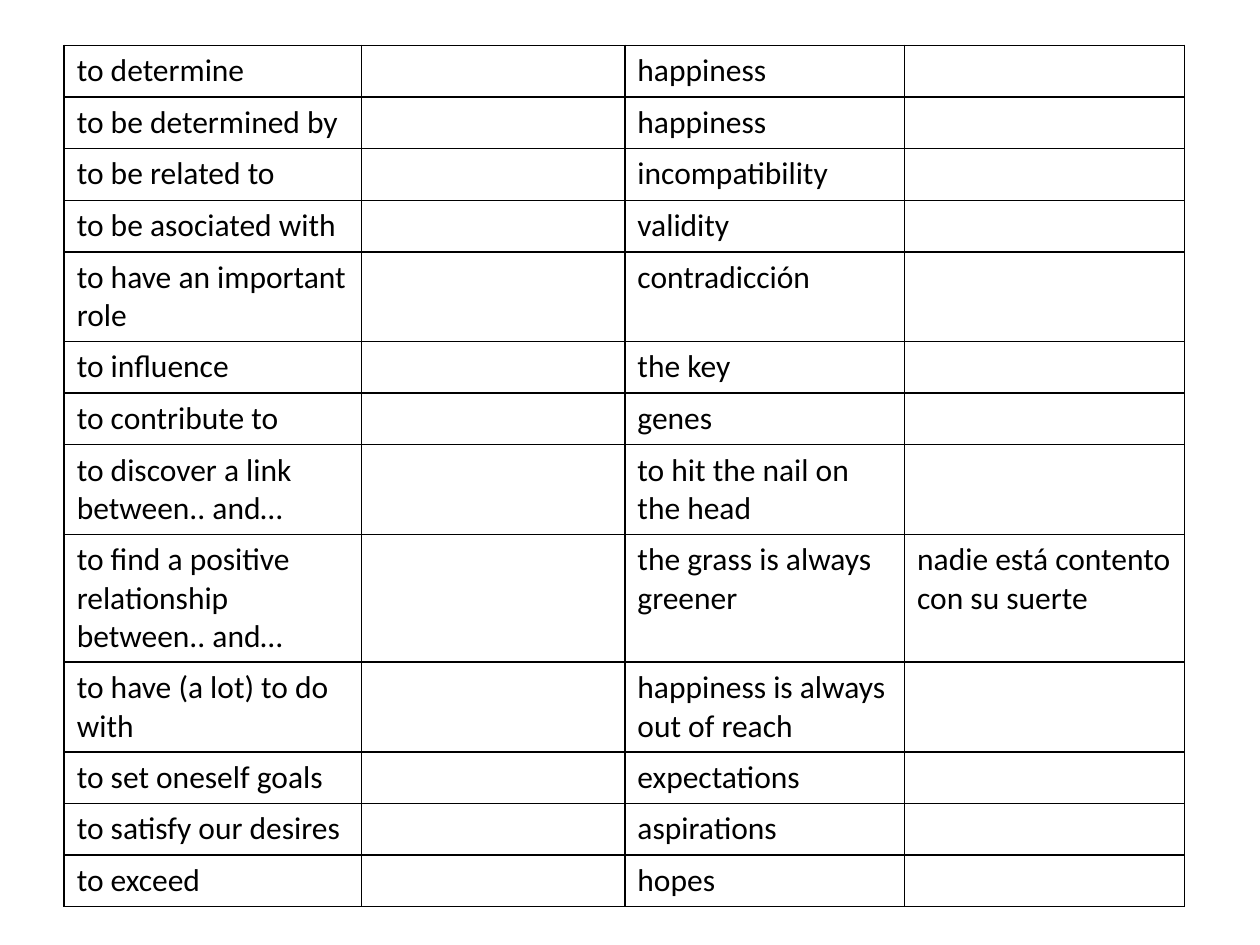
from dataclasses import dataclass

from lxml.etree import SubElement
from pptx import Presentation
from pptx.dml.color import RGBColor
from pptx.oxml.ns import qn
from pptx.slide import Slide
from pptx.util import Inches, Pt

COLORS = {"ink": "000000", "paper": "FFFFFF"}
COLUMN_WIDTHS = [2.36, 2.09, 2.22, 2.22]
ROW_HEIGHT = 0.41
VOCABULARY = [
    ("to determine", "", "happiness", ""),
    ("to be determined by", "", "happiness", ""),
    ("to be related to", "", "incompatibility", ""),
    ("to be asociated with", "", "validity", ""),
    ("to have an important role", "", "contradicción", ""),
    ("to influence", "", "the key", ""),
    ("to contribute to", "", "genes", ""),
    ("to discover a link between.. and…", "", "to hit the nail on the head", ""),
    (
        "to find a positive relationship between.. and…",
        "",
        "the grass is always greener",
        "nadie está contento con su suerte",
    ),
    ("to have (a lot) to do with", "", "happiness is always out of reach", ""),
    ("to set oneself goals", "", "expectations", ""),
    ("to satisfy our desires", "", "aspirations", ""),
    ("to exceed", "", "hopes", ""),
]


@dataclass
class SlideWriter:
    slide: Slide
    font: str = "Calibri"
    size: float = 18
    border: float = 1

    def borders(self, cell):
        properties = cell._tc.get_or_add_tcPr()
        for position, side in enumerate(("lnL", "lnR", "lnT", "lnB")):
            line = SubElement(properties, qn(f"a:{side}"), w=str(Pt(self.border)))
            fill = SubElement(line, qn("a:solidFill"))
            SubElement(fill, qn("a:srgbClr"), val=COLORS["ink"])
            properties.remove(line)
            properties.insert(position, line)

    def cell(self, cell, wording):
        cell.fill.solid()
        cell.fill.fore_color.rgb = RGBColor.from_string(COLORS["paper"])
        self.borders(cell)
        paragraph = cell.text_frame.paragraphs[0]
        paragraph.font.size = Pt(self.size)
        if wording:
            run = paragraph.add_run()
            run.text = wording
            run.font.name = self.font
            run.font.size = Pt(self.size)
            run.font.bold = False
            run.font.color.rgb = RGBColor.from_string(COLORS["ink"])

    def table(self, rows, widths, left, top, height):
        frame = self.slide.shapes.add_table(
            len(rows), len(widths), Inches(left), Inches(top),
            Inches(sum(widths)), Inches(height),
        )
        grid = frame.table
        grid.first_row = False
        grid.horz_banding = False
        for column, width in zip(grid.columns, widths):
            column.width = Inches(width)
        for row, wordings in zip(grid.rows, rows):
            row.height = Inches(ROW_HEIGHT)
            for cell, wording in zip(row.cells, wordings):
                self.cell(cell, wording)
        frame.height = Inches(height)


def main():
    presentation = Presentation()
    presentation.slide_width = Inches(10)
    presentation.slide_height = Inches(7.5)
    slide = presentation.slides.add_slide(presentation.slide_layouts[6])
    writer = SlideWriter(slide)
    writer.table(VOCABULARY, COLUMN_WIDTHS, left=0.51, top=0.36, height=6.75)
    presentation.save("out.pptx")


if __name__ == "__main__":
    main()
